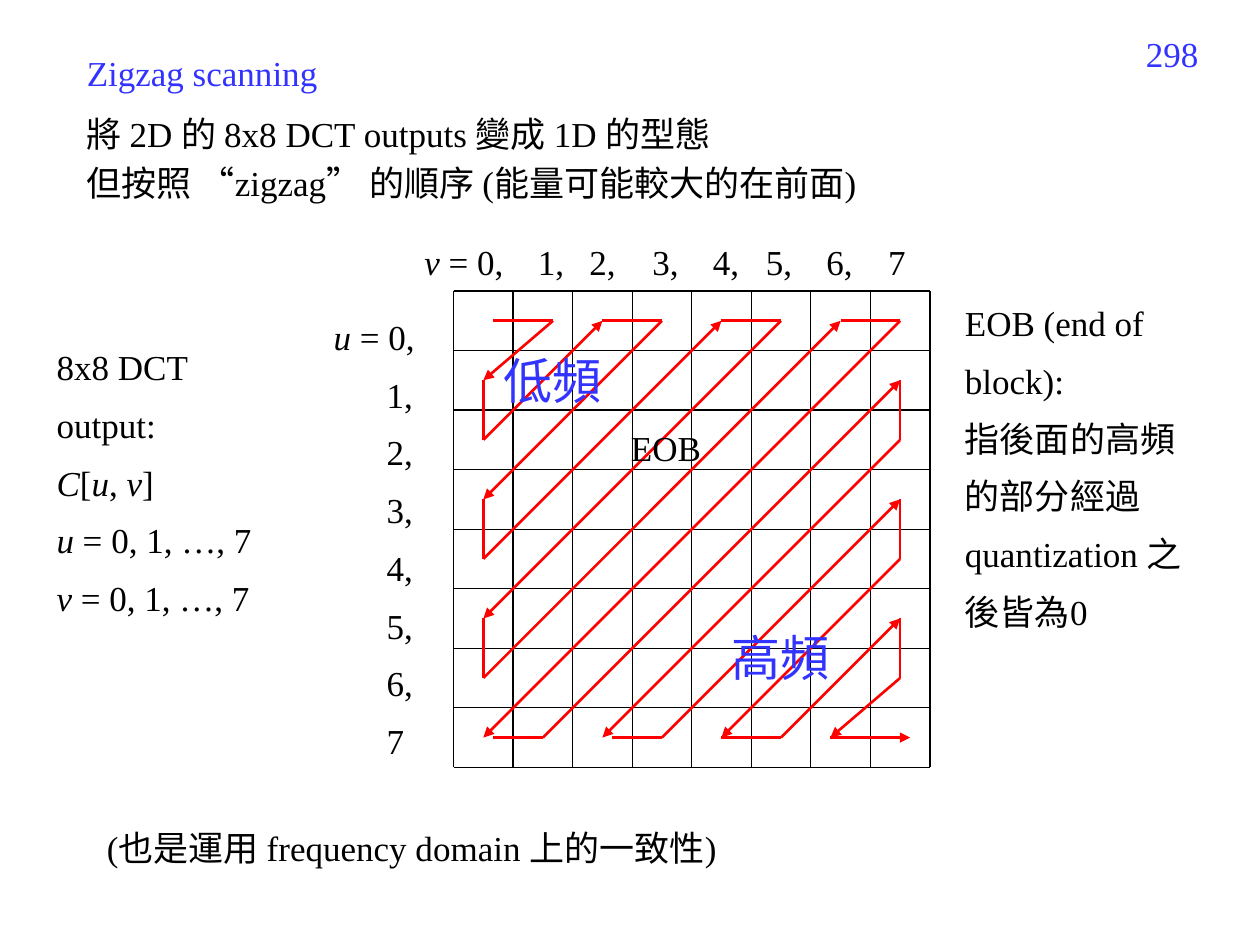
from pptx import Presentation
from pptx.dml.color import RGBColor
from pptx.enum.shapes import MSO_CONNECTOR
from pptx.enum.text import MSO_AUTO_SIZE, PP_ALIGN
from pptx.oxml.ns import qn
from pptx.util import Inches, Pt
from lxml.etree import SubElement

COLORS = {"text": "000000", "accent": "3333FF", "scan": "FF0000"}
FONT = "Times New Roman"
N = 8
LEFT, TOP, SIDE = 3.6, 2.31, 3.78
CELL = SIDE / N
NUDGE = 0.08

prs = Presentation()
prs.slide_width, prs.slide_height = Inches(10), Inches(7.5)
s = prs.slides.add_slide(prs.slide_layouts[6])


def add_text(left, top, width, height, lines, size=20, color="text", spacing=None):
    tb = s.shapes.add_textbox(Inches(left), Inches(top), Inches(width), Inches(height))
    tf = tb.text_frame
    tf.word_wrap = True
    tf.auto_size = MSO_AUTO_SIZE.SHAPE_TO_FIT_TEXT
    for i, line in enumerate(lines):
        p = tf.add_paragraph() if i else tf.paragraphs[0]
        p.font.name = FONT
        p.font.size = Pt(size)
        p.font.color.rgb = RGBColor.from_string(COLORS[color])
        if spacing:
            p.line_spacing = Pt(spacing)
        for j, piece in enumerate(line.split("*")):
            if piece:
                r = p.add_run()
                r.text = piece
                if j % 2:
                    r.font.italic = True
    return tf


def add_line(start, end, color, width, arrow=False):
    points = [Inches(v) for v in (*start, *end)]
    line = s.shapes.add_connector(MSO_CONNECTOR.STRAIGHT, *points)
    line.line.color.rgb = RGBColor.from_string(COLORS[color])
    line.line.width = Pt(width)
    if arrow:
        SubElement(line.line._get_or_add_ln(), qn("a:tailEnd"), type="triangle")
    SubElement(line._element.spPr, qn("a:effectLst"))


tf = add_text(7.28, 0.21, 2.33, 0.52, ["298"], color="accent")
tf.paragraphs[0].alignment = PP_ALIGN.RIGHT
add_text(0.59, 0.36, 5.28, 0.44, ["Zigzag scanning"], color="accent")
add_text(0.75, 6.51, 5.51, 0.44, ["(也是運用 frequency domain 上的一致性)"])

for i in range(N + 1):
    x = LEFT + i * CELL
    add_line((x, TOP), (x, TOP + SIDE), "text", 0.75)
for i in range(N + 1):
    y = TOP + i * CELL
    add_line((LEFT, y), (LEFT + SIDE, y), "text", 0.75)

add_text(0.59, 0.84, 6.22, 0.44, ["將 2D 的 8x8 DCT outputs 變成 1D 的型態"])
add_text(0.59, 1.23, 8.27, 0.44, ["但按照 “zigzag” 的順序 (能量可能較大的在前面)"])

centers = {
    (col, row): (LEFT + (col + 0.5) * CELL, TOP + (row + 0.5) * CELL)
    for col in range(N)
    for row in range(N)
}
for cell, dx in {(1, 0): NUDGE, (6, 7): -NUDGE, (7, 7): NUDGE}.items():
    x, y = centers[cell]
    centers[cell] = (x + dx, y)
inset_starts = [(0, 0), (0, 7), (2, 7)]

last = (0, 0)
for d in range(1, 2 * N - 1):
    low, high = max(0, d - N + 1), min(d, N - 1)
    first, end = ((high, low), (low, high)) if d % 2 else ((low, high), (high, low))
    x, y = centers[last]
    if last in inset_starts:
        x += NUDGE
    add_line((x, y), centers[first], "scan", 1.5, arrow=first == end)
    if first != end:
        add_line(centers[first], centers[end], "scan", 1.5, arrow=True)
    last = end

tf = add_text(3.27, 1.86, 5.04, 0.44, ["*v* = 0,\t1,\t2,\t3,\t4,\t5,\t6,\t7"])
tabs = SubElement(tf.paragraphs[0]._p.get_or_add_pPr(), qn("a:tabLst"))
tabs.getparent().insert(0, tabs)
for pos in (0.9, 1.31, 1.81, 2.29, 2.71, 3.19, 3.68):
    SubElement(tabs, qn("a:tab"), pos=str(Inches(pos)), algn="l")

rows = ["*u* = 0,"] + [f"{i}," for i in range(1, N - 1)] + [str(N - 1)]
tf = add_text(2.48, 2.33, 1.1, 3.8, rows, spacing=33)
for i, p in enumerate(tf.paragraphs):
    p._p.get_or_add_pPr().set("marL", str(Inches(0.49 if i else 0.07)))

add_text(0.35, 2.57, 2.05, 1.9,
         ["8x8 DCT output:", "*C*[*u*, *v*]", "*u* = 0, 1, …, 7", "*v* = 0, 1, …, 7"],
         spacing=33)
add_text(3.9, 2.73, 1.1, 0.57, ["低頻"], size=28, color="accent")
add_text(5.71, 4.93, 1.1, 0.57, ["高頻"], size=28, color="accent")
add_text(4.91, 3.21, 0.77, 0.56, ["EOB"], spacing=33)
add_text(7.56, 2.22, 1.93, 2.88,
         ["EOB (end of block):", "指後面的高頻的部分經過 quantization 之後皆為0"],
         spacing=33)

prs.save("out.pptx")
